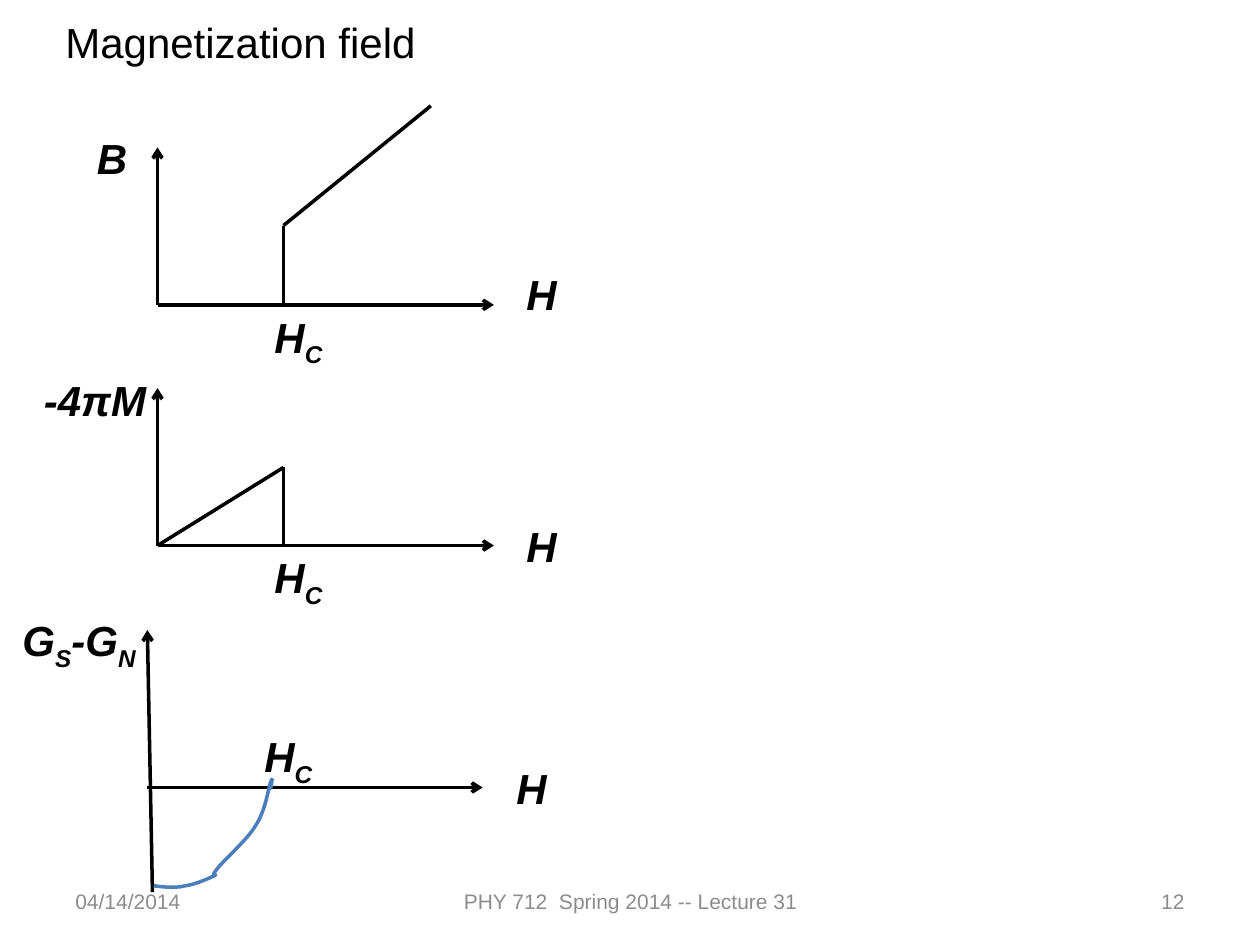
from lxml import etree
from pptx import Presentation
from pptx.dml.color import RGBColor
from pptx.enum.shapes import MSO_CONNECTOR
from pptx.enum.text import MSO_ANCHOR, MSO_AUTO_SIZE, PP_ALIGN
from pptx.oxml.ns import qn
from pptx.util import Inches, Pt

STRAIGHT = MSO_CONNECTOR.STRAIGHT
TOP, MIDDLE = MSO_ANCHOR.TOP, MSO_ANCHOR.MIDDLE
LEFT, CENTER, RIGHT = PP_ALIGN.LEFT, PP_ALIGN.CENTER, PP_ALIGN.RIGHT
FIT_SHAPE, NO_FIT = MSO_AUTO_SIZE.SHAPE_TO_FIT_TEXT, MSO_AUTO_SIZE.NONE

COLORS = {"ink": "000000", "footer": "8C8C8C", "curve": "4B7EBC"}
TITLE = {"name": "Arial", "size": Pt(24)}
LABEL = {**TITLE, "bold": True, "italic": True}
FOOTER = {"name": "Arial", "size": Pt(12)}
H = [("H", 0)]
H_C = [("H", 0), ("C", -25)]


def bezier_points(start, segments, steps=12):
    """Sample a chain of cubic segments, each given as three points."""
    points = [start]
    for first, second, end in segments:
        corners = (points[-1], first, second, end)
        for step in range(1, steps + 1):
            t = step / steps
            weights = ((1 - t) ** 3, 3 * t * (1 - t) ** 2, 3 * t * t * (1 - t), t ** 3)
            points.append(tuple(sum(w * corner[axis] for w, corner in zip(weights, corners))
                                for axis in (0, 1)))
    return points


class SlideWriter:
    def __init__(self, slide, line_width=2):
        self.slide = slide
        self.line_width = Pt(line_width)

    def text(self, runs, left, top, width=1.92, height=0.5, style=LABEL, color="ink",
             align=LEFT, anchor=TOP, fit=FIT_SHAPE):
        shape = self.slide.shapes.add_textbox(*map(Inches, (left, top, width, height)))
        frame = shape.text_frame
        frame.word_wrap = True
        frame.auto_size = fit
        frame.vertical_anchor = anchor
        paragraph = frame.paragraphs[0]
        paragraph.alignment = align
        for words, baseline in runs:
            run = paragraph.add_run()
            run.text = words
            for name, value in style.items():
                setattr(run.font, name, value)
            run.font.color.rgb = RGBColor.from_string(COLORS[color])
            if baseline:
                run._r.get_or_add_rPr().set("baseline", str(baseline * 1000))

    def line(self, start, end, arrow=False):
        connector = self.slide.shapes.add_connector(STRAIGHT, *map(Inches, (*start, *end)))
        connector.line.width = self.line_width
        connector.line.color.rgb = RGBColor.from_string(COLORS["ink"])
        if arrow:
            etree.SubElement(connector.line._get_or_add_ln(), qn("a:tailEnd"), type="arrow")
        etree.SubElement(connector._element.spPr, qn("a:effectLst"))

    def curve(self, points):
        scaled = [(Inches(x), Inches(y)) for x, y in points]
        builder = self.slide.shapes.build_freeform(*scaled[0])
        builder.add_line_segments(scaled[1:], close=False)
        shape = builder.convert_to_shape()
        shape.shadow.inherit = False
        shape.fill.background()
        shape.line.width = self.line_width
        shape.line.color.rgb = RGBColor.from_string(COLORS["curve"])


def main():
    presentation = Presentation()
    presentation.slide_width, presentation.slide_height = Inches(10), Inches(7.5)
    writer = SlideWriter(presentation.slides.add_slide(presentation.slide_layouts[6]))

    # Footer
    for words, left, width, align in (
        ("04/14/2014", 0.5, 2.33, LEFT),
        ("PHY 712  Spring 2014 -- Lecture 31", 3.42, 3.17, CENTER),
        ("12", 7.17, 2.33, RIGHT),
    ):
        writer.text([(words, 0)], left, 6.95, width, 0.4, FOOTER, "footer",
                    align, MIDDLE, NO_FIT)

    # Title
    writer.text([("Magnetization field", 0)], 0.42, 0.08, 8.92, style=TITLE)

    # Axes of the three graphs
    for vertical, horizontal in (
        (((1.25, 2.42), (1.25, 1.17)), ((1.25, 2.42), (3.92, 2.42))),
        (((1.25, 4.33), (1.25, 3.08)), ((1.25, 4.33), (3.92, 4.33))),
        (((1.21, 7.08), (1.17, 5)), ((1.17, 6.25), (3.83, 6.25))),
    ):
        writer.line(*vertical, arrow=True)
        writer.line(*horizontal, arrow=True)

    # B and magnetization lines around the critical field
    for start, end in (
        ((2.25, 1.79), (3.42, 0.84)),
        ((2.25, 1.79), (2.25, 2.42)),
        ((1.25, 4.33), (2.25, 3.71)),
        ((2.25, 3.71), (2.25, 4.33)),
    ):
        writer.line(start, end)

    # Axis and critical field labels
    for runs, left, top in (
        ([("B", 0)], 0.67, 1),
        (H, 4.08, 2.08),
        (H_C, 2.08, 2.42),
        ([("-4πM", 0)], 0.25, 2.92),
        (H, 4.08, 4.08),
        (H_C, 2.08, 4.33),
        ([("G", 0), ("S", -25), ("-G", 0), ("N", -25)], 0.08, 4.83),
        (H, 4, 6),
        (H_C, 2, 5.75),
    ):
        writer.text(runs, left, top)

    # Free energy curve
    writer.curve(bezier_points((1.22, 7.03), (
        ((1.3, 7.04), (1.39, 7.05), (1.47, 7.03)),
        ((1.55, 7.02), (1.66, 6.97), (1.7, 6.95)),
        ((1.74, 6.93), (1.66, 6.97), (1.72, 6.9)),
        ((1.77, 6.83), (1.96, 6.67), (2.03, 6.55)),
        ((2.11, 6.43), (2.13, 6.25), (2.15, 6.2)),
        ((2.17, 6.15), (2.15, 6.24), (2.15, 6.25)),
        ((2.15, 6.26), (2.14, 6.25), (2.13, 6.25)),
    )))

    presentation.save("out.pptx")


if __name__ == "__main__":
    main()
